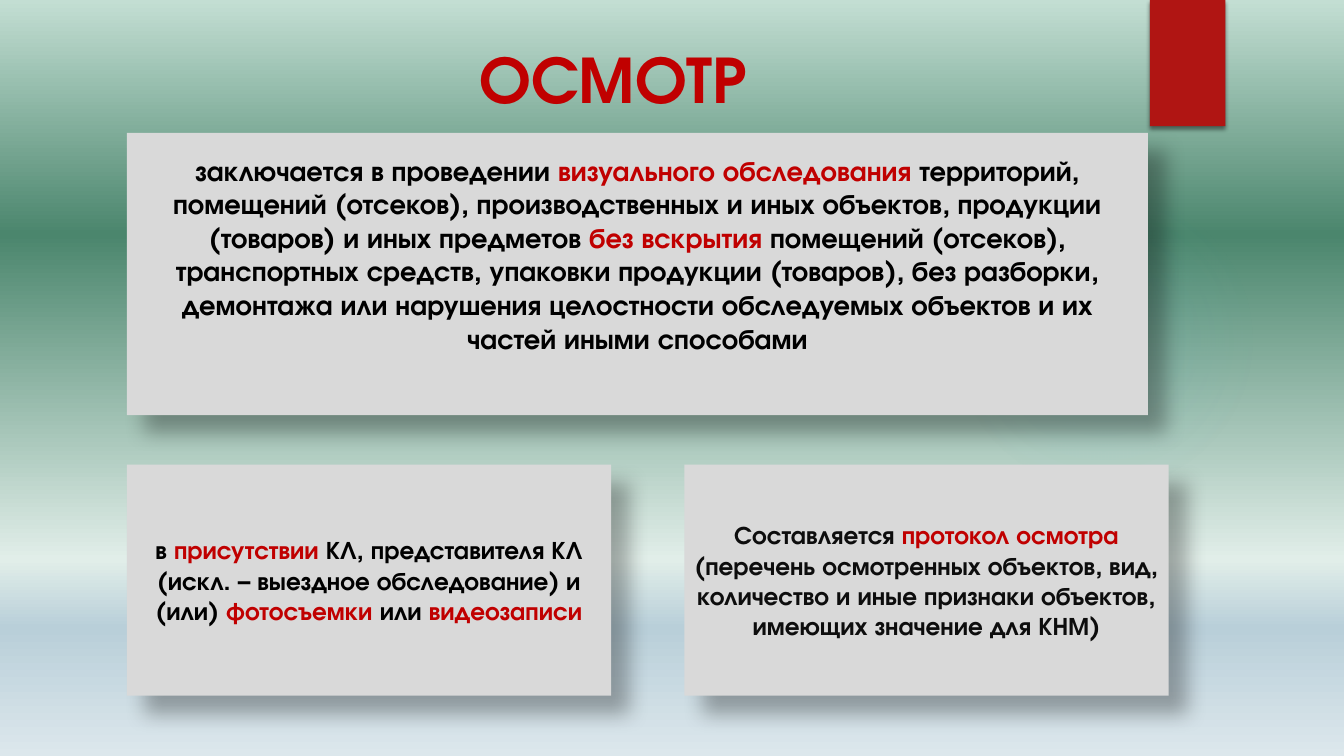
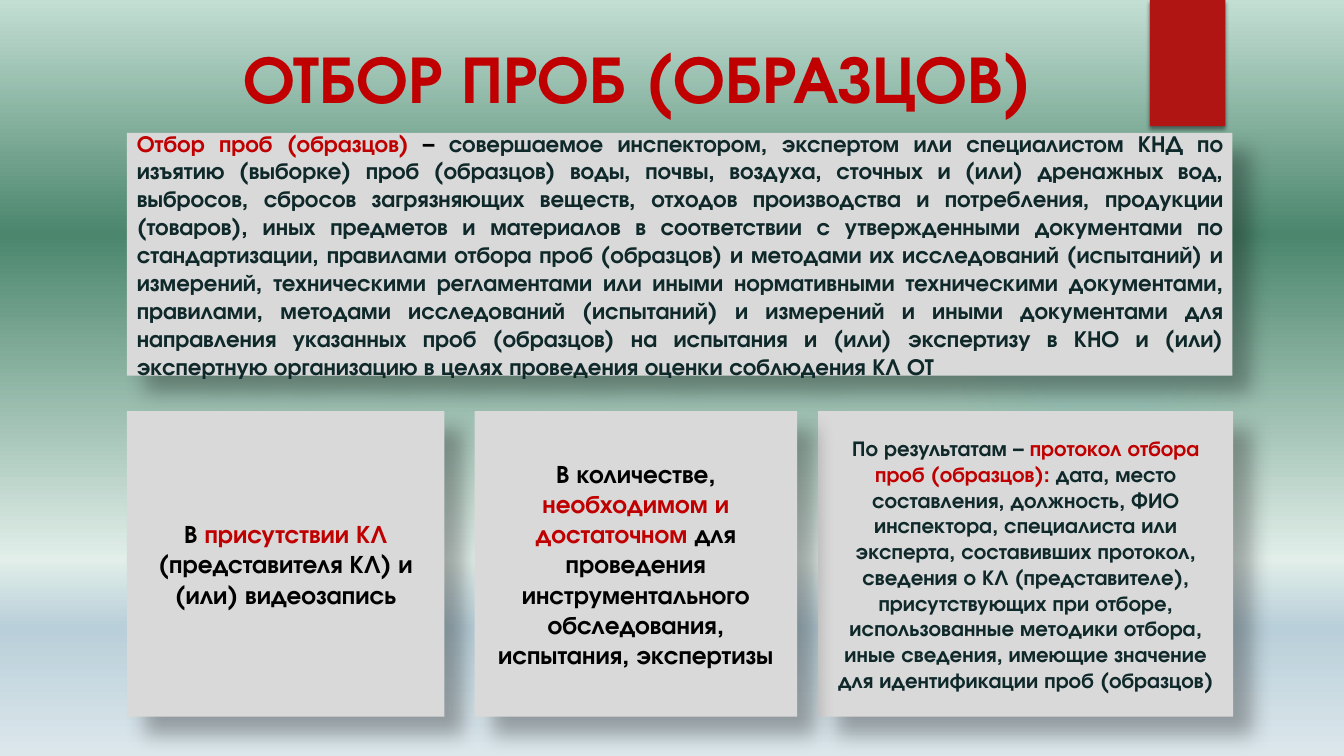
from pptx import Presentation
from pptx.dml.color import RGBColor
from pptx.enum.shapes import MSO_SHAPE
from pptx.enum.text import MSO_ANCHOR, PP_ALIGN
from pptx.oxml import parse_xml
from pptx.oxml.ns import nsdecls
from pptx.util import Cm, Pt

FONT = "TeX Gyre Adventor"
RED = RGBColor(0xC0, 0x00, 0x00)
TAB = RGBColor(0xB0, 0x15, 0x13)
GREY = RGBColor(0xD9, 0xD9, 0xD9)
BLACK = RGBColor(0x00, 0x00, 0x00)
INK = RGBColor(0x0D, 0x0D, 0x0D)
DARK = RGBColor(0x0F, 0x28, 0x2A)
TEAL = RGBColor(0x50, 0xB9, 0xC1)
SKY = [
    (0, RGBColor(0xC3, 0xDE, 0xD3), 100),
    (31, RGBColor(0x4B, 0x86, 0x6D), 100),
    (74, RGBColor(0xE1, 0xEE, 0xE9), 100),
    (83, RGBColor(0xB9, 0xCF, 0xD9), 100),
    (100, RGBColor(0xDC, 0xE7, 0xEC), 100),
]
GLOW = [(0, TEAL, 7), (36, TEAL, 6), (69, TEAL, 0), (100, TEAL, 0)]
DOWN = '<a:lin ang="5400000" scaled="0"/>'
ROUND = ('<a:path path="circle"><a:fillToRect l="50000" t="50000" '
         'r="50000" b="50000"/></a:path>')
LEFT = 3.2
TOP = 3.35


def blend(root, stops, course):
    marks = "".join(
        f'<a:gs pos="{pos * 1000}"><a:srgbClr val="{tint}">'
        f'<a:alpha val="{alpha * 1000}"/></a:srgbClr></a:gs>'
        for pos, tint, alpha in stops)
    fill = root.xpath(".//a:solidFill")[0]
    fill.getparent().replace(fill, parse_xml(
        f'<a:gradFill {nsdecls("a")} rotWithShape="1">'
        f'<a:gsLst>{marks}</a:gsLst>{course}</a:gradFill>'))


def shade(shape, alpha, blur, dist, angle):
    shape.shadow.inherit = False
    shape.element.xpath(".//a:effectLst")[0].append(parse_xml(
        f'<a:outerShdw {nsdecls("a")} blurRad="{Pt(blur)}" dist="{Pt(dist)}" '
        f'dir="{angle * 60000}" algn="tl" rotWithShape="0">'
        f'<a:srgbClr val="{BLACK}"><a:alpha val="{alpha * 1000}"/>'
        f'</a:srgbClr></a:outerShdw>'))


def block(slide, kind, box, tint):
    shape = slide.shapes.add_shape(kind, *map(Cm, box))
    shape.shadow.inherit = False
    shape.fill.solid()
    shape.fill.fore_color.rgb = tint
    shape.line.fill.background()
    return shape


def write(frame, parts, size, align=PP_ALIGN.CENTER):
    frame.word_wrap = True
    frame.vertical_anchor = MSO_ANCHOR.MIDDLE
    line = frame.paragraphs[0]
    line.alignment = align
    for text, tint in parts:
        run = line.add_run()
        run.text = text
        run.font.name = FONT
        run.font.size = Pt(size)
        run.font.bold = True
        run.font.color.rgb = tint


def card(slide, box, parts, size=18, align=PP_ALIGN.CENTER):
    shape = block(slide, MSO_SHAPE.RECTANGLE, box, GREY)
    shade(shape, 30, 15, 18, 45)
    write(shape.text_frame, parts, size, align)
    return shape


def start(deck, title, width):
    slide = deck.slides.add_slide(deck.slide_layouts[6])
    glow = block(slide, MSO_SHAPE.OVAL, (23.9, 4.65, 7.82, 7.82), TEAL)
    blend(glow.element, GLOW, ROUND)
    tab = block(slide, MSO_SHAPE.RECTANGLE, (28.98, 0, 1.9, 3.18), TAB)
    shade(tab, 45, 3, 2, 90)
    head = slide.shapes.add_textbox(Cm(LEFT), Cm(0.66), Cm(width), Cm(2.56))
    write(head.text_frame, [(title, RED)], 48)
    return slide


def survey(deck):
    slide = start(deck, "ОСМОТР", 24.51)
    main_card = card(slide, (LEFT, TOP, 25.73, 7.11), [
        ("заключается в проведении ", BLACK),
        ("визуального обследования ", RED),
        ("территорий, помещений (отсеков), производственных и иных объектов, "
         "продукции (товаров) и иных предметов ", BLACK),
        ("без вскрытия ", RED),
        ("помещений (отсеков), транспортных средств, упаковки продукции "
         "(товаров), без разборки, демонтажа или нарушения целостности "
         "обследуемых объектов и их частей иными способами", BLACK),
    ], 20)
    main_card.text_frame.margin_bottom = Cm(1.14)
    row, high, wide = 11.71, 5.82, 12.2
    card(slide, (LEFT, row, wide, high), [
        ("в ", BLACK),
        ("присутствии", RED),
        (" КЛ, представителя КЛ (искл. – выездное обследование) и (или) ",
         BLACK),
        ("фотосъемки ", RED),
        ("или ", BLACK),
        ("видеозаписи", RED),
    ])
    card(slide, (17.25, row, wide, high), [
        ("Составляется ", INK),
        ("протокол осмотра ", RED),
        ("(перечень осмотренных объектов, вид, количество и иные признаки "
         "объектов, имеющих значение для КНМ)", INK),
    ])


def sample(deck):
    slide = start(deck, "ОТБОР ПРОБ (ОБРАЗЦОВ)", 25.73)
    card(slide, (LEFT, TOP, 27.86, 6.12), [
        ("Отбор проб (образцов)", RED),
        (" – ", BLACK),
        ("совершаемое инспектором, экспертом или специалистом КНД по изъятию "
         "(выборке) проб (образцов) воды, почвы, воздуха, сточных и (или) "
         "дренажных вод, выбросов, сбросов загрязняющих веществ, отходов "
         "производства и потребления, продукции (товаров), иных предметов и "
         "материалов в соответствии с утвержденными документами по "
         "стандартизации, правилами отбора проб (образцов) и методами их "
         "исследований (испытаний) и измерений, техническими регламентами или "
         "иными нормативными техническими документами, правилами, методами "
         "исследований (испытаний) и измерений и иными документами для "
         "направления указанных проб (образцов) на испытания и (или) "
         "экспертизу в КНО и (или) экспертную организацию в целях проведения "
         "оценки соблюдения КЛ ОТ", DARK),
    ], 16.6, PP_ALIGN.JUSTIFY)
    row, high = 10.36, 7.7
    card(slide, (20.62, row, 10.46, high), [
        ("По результатам – ", DARK),
        ("протокол отбора проб (образцов): ", RED),
        ("дата, место составления, должность, ФИО инспектора, специалиста или "
         "эксперта, составивших протокол, сведения о КЛ (представителе), "
         "присутствующих при отборе, использованные методики отбора, иные "
         "сведения, имеющие значение для идентификации проб (образцов)", DARK),
    ], 15.3)
    card(slide, (LEFT, row, 8, high), [
        ("В ", BLACK),
        ("присутствии КЛ ", RED),
        ("(представителя КЛ) и (или) видеозапись", BLACK),
    ])
    card(slide, (11.96, row, 8.13, high), [
        ("В количестве, ", BLACK),
        ("необходимом и достаточном ", RED),
        ("для проведения инструментального обследования, испытания, "
         "экспертизы", BLACK),
    ])


def main():
    deck = Presentation()
    deck.slide_width = Cm(33.87)
    deck.slide_height = Cm(19.05)
    master = deck.slide_master
    master.background.fill.solid()
    master.background.fill.fore_color.rgb = GREY
    blend(master.element.xpath(".//p:bgPr")[0], SKY, DOWN)
    survey(deck)
    sample(deck)
    deck.save("out.pptx")


if __name__ == "__main__":
    main()
